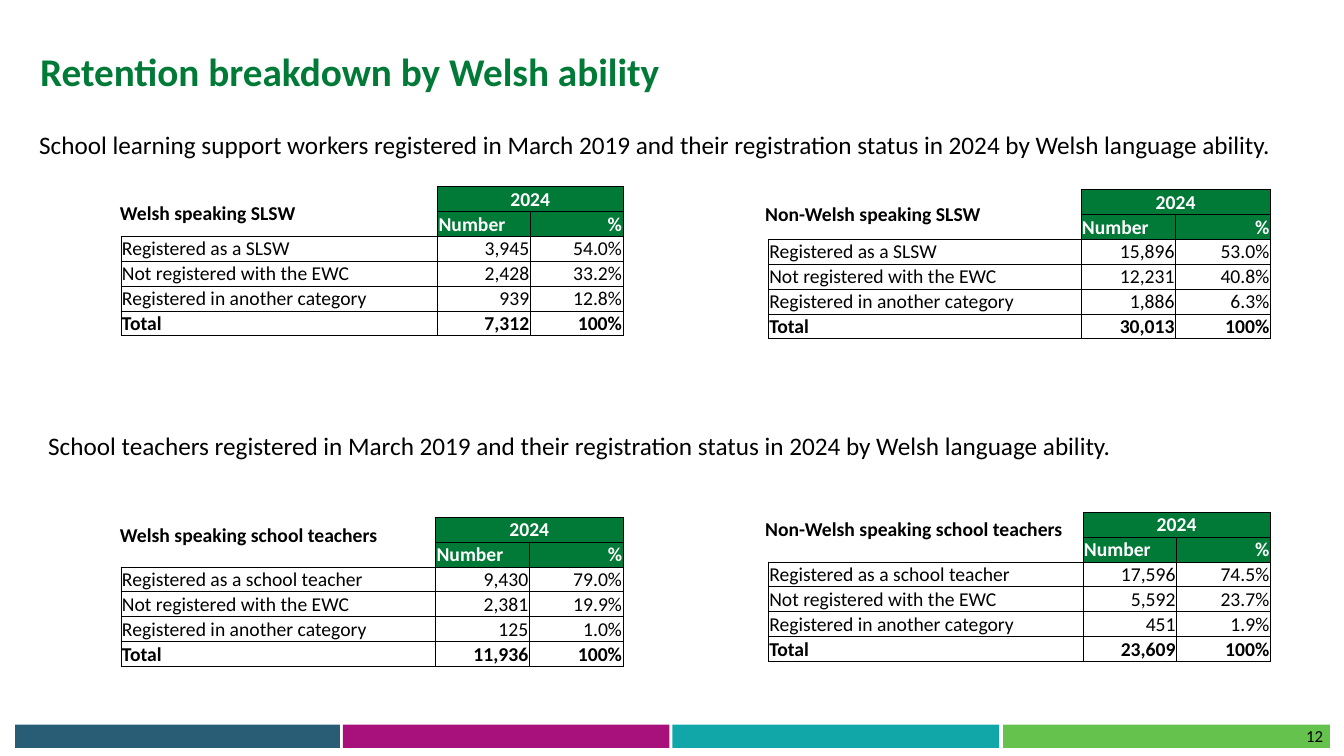
from dataclasses import dataclass
from lxml import etree
from pptx import Presentation
from pptx.dml.color import RGBColor
from pptx.enum.shapes import MSO_SHAPE
from pptx.enum.text import MSO_ANCHOR, PP_ALIGN
from pptx.oxml.ns import qn
from pptx.util import Pt

PX = 9144  # EMU per px, 100 px to the inch
RECT = MSO_SHAPE.RECTANGLE
BOTTOM = MSO_ANCHOR.BOTTOM
LEFT, MID, RIGHT = PP_ALIGN.LEFT, PP_ALIGN.CENTER, PP_ALIGN.RIGHT


@dataclass(frozen=True)
class Theme:
    font: str = "Calibri"
    green: str = "017A37"
    black: str = "000000"
    white: str = "FFFFFF"
    title: int = 28
    lead: int = 18
    body: int = 14
    page: int = 12
    rule: float = 0.5


@dataclass(frozen=True)
class Bar:
    x: int
    w: int
    color: str


@dataclass(frozen=True)
class Label:
    text: str
    x: int
    y: int
    w: int
    h: int
    size: int
    color: str
    bold: bool = False
    align: PP_ALIGN = LEFT


@dataclass(frozen=True)
class Grid:
    x: int
    y: int
    num: int  # width of each figure column
    role: str
    counts: tuple[str, ...]
    rates: tuple[str, ...]


THEME = Theme()
GRID_W, ROW_H = 498, 24

BARS = (
    Bar(15, 322, "295D75"),
    Bar(340, 324, "A8117C"),
    Bar(667, 324, "11A6A8"),
    Bar(995, 324, "65C24C"),
)

LABELS = (
    Label("Retention breakdown by Welsh ability", 30, 47, 844, 90,
          THEME.title, THEME.green, True),
    Label("School learning support workers registered in March 2019 and their "
          "registration status in 2024 by Welsh language ability.",
          29, 123, 1276, 40, THEME.lead, THEME.black),
    Label("School teachers registered in March 2019 and their "
          "registration status in 2024 by Welsh language ability.",
          38, 422, 1276, 40, THEME.lead, THEME.black),
    Label("Welsh speaking SLSW", 109, 194, 210, 34,
          THEME.body, THEME.black, True),
    Label("Non-Welsh speaking SLSW", 749, 195, 262, 34,
          THEME.body, THEME.black, True),
    Label("Welsh speaking school teachers", 109, 514, 292, 34,
          THEME.body, THEME.black, True),
    Label("Non-Welsh speaking school teachers", 749, 508, 319, 34,
          THEME.body, THEME.black, True),
    Label("12", 1250, 715, 72, 30, THEME.page, THEME.black, align=RIGHT),
)

GRIDS = (
    Grid(120, 185, 92, "SLSW", ("3,945", "2,428", "939", "7,312"),
         ("54.0%", "33.2%", "12.8%", "100%")),
    Grid(762, 188, 94, "SLSW", ("15,896", "12,231", "1,886", "30,013"),
         ("53.0%", "40.8%", "6.3%", "100%")),
    Grid(120, 513, 93, "school teacher", ("9,430", "2,381", "125", "11,936"),
         ("79.0%", "19.9%", "1.0%", "100%")),
    Grid(762, 508, 93, "school teacher", ("17,596", "5,592", "451", "23,609"),
         ("74.5%", "23.7%", "1.9%", "100%")),
)


def style(para, size: int, color: str, bold: bool, align: PP_ALIGN) -> None:
    para.alignment = align
    for run in para.runs:
        run.font.name = THEME.font
        run.font.size = Pt(size)
        run.font.bold = bold
        run.font.color.rgb = RGBColor.from_string(color)


def draw_bar(slide, bar: Bar) -> None:
    shape = slide.shapes.add_shape(RECT, bar.x * PX, 719 * PX, bar.w * PX, 23 * PX)
    shape.shadow.inherit = False
    shape.fill.solid()
    shape.fill.fore_color.rgb = RGBColor.from_string(bar.color)
    shape.line.fill.background()


def draw_label(slide, label: Label) -> None:
    box = slide.shapes.add_textbox(label.x * PX, label.y * PX, label.w * PX, label.h * PX)
    frame = box.text_frame
    frame.word_wrap = True
    frame.text = label.text
    para = frame.paragraphs[0]
    if label.size == THEME.title:
        para.line_spacing = 0.9
    style(para, label.size, label.color, label.bold, label.align)


def set_edges(cell, shown: str) -> None:
    props = cell._tc.get_or_add_tcPr()
    for side in "LRTB":
        line = etree.SubElement(props, qn(f"a:ln{side}"), w=str(Pt(THEME.rule)))
        if side in shown:
            fill = etree.SubElement(line, qn("a:solidFill"))
            etree.SubElement(fill, qn("a:srgbClr"), val=THEME.black)
        else:
            etree.SubElement(line, qn("a:noFill"))


def draw_cell(cell, text: str, row: int, col: int) -> None:
    head = row < 2
    blank = head and col == 0
    cell.margin_left = cell.margin_right = cell.margin_top = PX
    cell.margin_bottom = 0
    cell.vertical_anchor = BOTTOM
    set_edges(cell, ("R", "RB")[row] if blank else "LRTB")
    if head and not blank:
        cell.fill.solid()
        cell.fill.fore_color.rgb = RGBColor.from_string(THEME.green)
    else:
        cell.fill.background()
    para = cell.text_frame.paragraphs[0]
    if not text:
        # Keep empty cells as low as the filled ones
        etree.SubElement(para._p, qn("a:endParaRPr"), sz=str(THEME.body * 100))
        return
    para.text = text
    if row == 0:
        align = MID
    else:
        align = LEFT if col == 0 or text == "Number" else RIGHT
    color = THEME.white if head else THEME.black
    style(para, THEME.body, color, head or row == 5, align)


def draw_grid(slide, grid: Grid) -> None:
    names = (f"Registered as a {grid.role}", "Not registered with the EWC",
             "Registered in another category", "Total")
    rows = [("", "2024", ""), ("", "Number", "%"),
            *zip(names, grid.counts, grid.rates)]
    table = slide.shapes.add_table(len(rows), 3, grid.x * PX, grid.y * PX,
                                   GRID_W * PX, ROW_H * len(rows) * PX).table
    table.first_row = table.horz_banding = False
    for col, width in enumerate((GRID_W - 2 * grid.num, grid.num, grid.num)):
        table.columns[col].width = width * PX
    table.cell(0, 1).merge(table.cell(0, 2))
    for r, texts in enumerate(rows):
        table.rows[r].height = ROW_H * PX
        for c, text in enumerate(texts):
            draw_cell(table.cell(r, c), text, r, c)


def main() -> None:
    deck = Presentation()
    deck.slide_width, deck.slide_height = 1333 * PX, 750 * PX
    slide = deck.slides.add_slide(deck.slide_layouts[6])
    # Footer bars
    for bar in BARS:
        draw_bar(slide, bar)
    # Tables
    for grid in GRIDS:
        draw_grid(slide, grid)
    # Title, leads, table names and page number
    for label in LABELS:
        draw_label(slide, label)
    deck.save("out.pptx")


if __name__ == "__main__":
    main()
